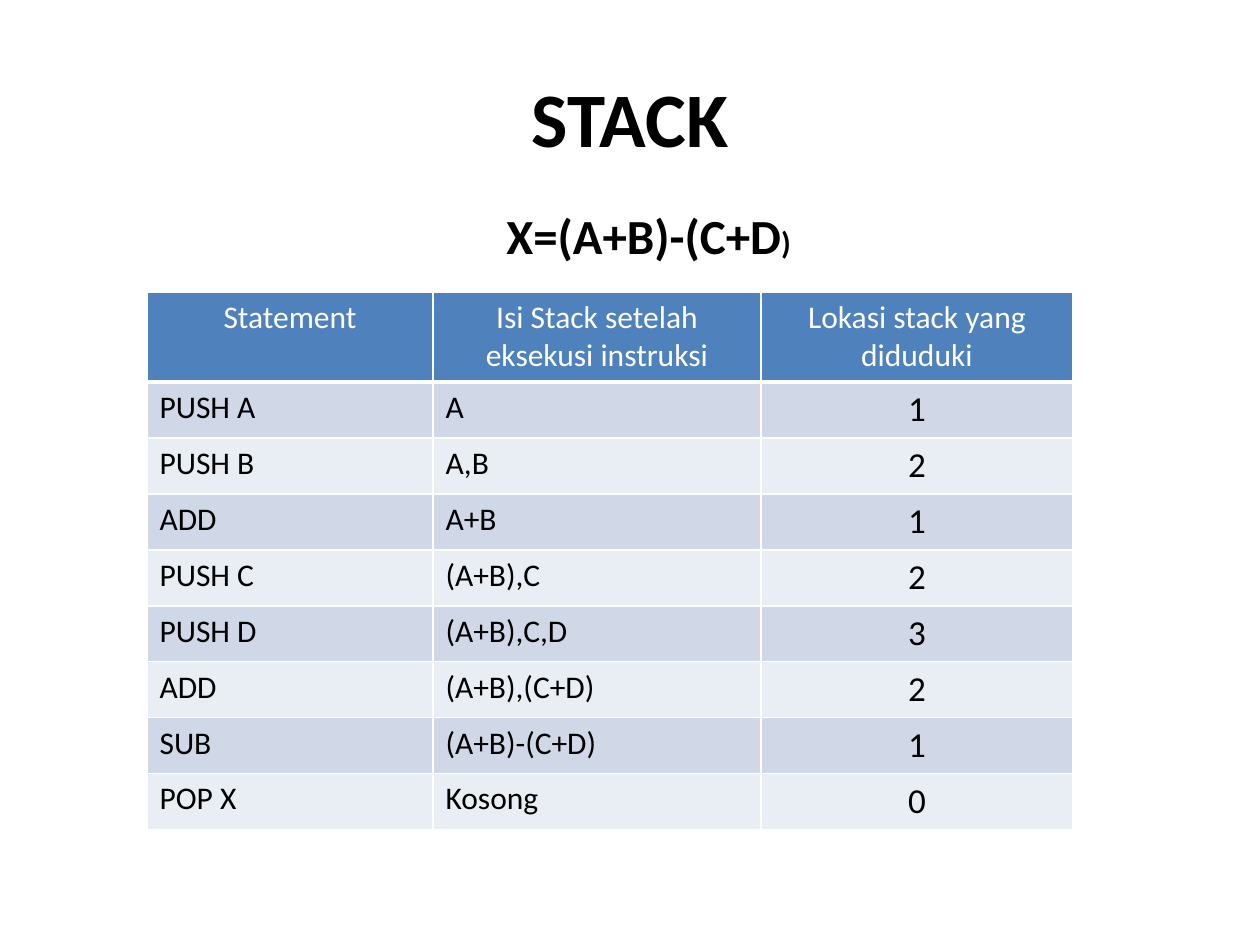
from lxml import etree
from pptx import Presentation
from pptx.dml.color import RGBColor
from pptx.enum.text import MSO_ANCHOR, PP_ALIGN
from pptx.oxml.ns import qn
from pptx.util import Emu, Pt

CENTER = PP_ALIGN.CENTER
LEFT = PP_ALIGN.LEFT
MIDDLE = MSO_ANCHOR.MIDDLE
TOP = MSO_ANCHOR.TOP

PX_PER_INCH = 126
FONT = "Calibri"
COLORS = {
    "text": "000000",
    "white": "FFFFFF",
    "header": "4F81BD",
    "odd": "D0D8E8",
    "even": "E9EDF4",
}
COLUMN_WIDTHS = [286, 328, 312]
HEADER_HEIGHT = 90
ROW_HEIGHT = 56
HEADINGS = ["Statement", "Isi Stack setelah eksekusi instruksi", "Lokasi stack yang diduduki"]
STEPS = [
    ["PUSH A", "A", "1"],
    ["PUSH B", "A,B", "2"],
    ["ADD", "A+B", "1"],
    ["PUSH C", "(A+B),C", "2"],
    ["PUSH D", "(A+B),C,D", "3"],
    ["ADD", "(A+B),(C+D)", "2"],
    ["SUB", "(A+B)-(C+D)", "1"],
    ["POP X", "Kosong", "0"],
]


def px(length):
    return Emu(round(length * 914400 / PX_PER_INCH))


def color(name):
    return RGBColor.from_string(COLORS[name])


def style_run(run, size, color_name="text", bold=False):
    run.font.name = FONT
    run.font.size = Pt(size)
    run.font.bold = bold
    run.font.color.rgb = color(color_name)


def add_text(page, box, spans, anchor, align, wrap):
    frame = page.shapes.add_textbox(*map(px, box)).text_frame
    frame.word_wrap = wrap
    frame.vertical_anchor = anchor
    para = frame.paragraphs[0]
    para.alignment = align
    for text, size in spans:
        run = para.add_run()
        run.text = text
        style_run(run, size, bold=True)


def set_borders(cell, bottom_width):
    properties = cell._tc.get_or_add_tcPr()
    for side, width in (("L", 1), ("R", 1), ("T", 1), ("B", bottom_width)):
        line = etree.SubElement(properties, qn(f"a:ln{side}"), w=str(Pt(width)))
        fill = etree.SubElement(line, qn("a:solidFill"))
        etree.SubElement(fill, qn("a:srgbClr"), val=COLORS["white"])


def fill_cell(cell, text, size, align, text_color, fill_color, bottom_width):
    set_borders(cell, bottom_width)
    cell.fill.solid()
    cell.fill.fore_color.rgb = color(fill_color)
    cell.text_frame.text = text
    para = cell.text_frame.paragraphs[0]
    para.alignment = align
    style_run(para.runs[0], size, text_color)


def add_stack_table(page, left, top):
    width = sum(COLUMN_WIDTHS)
    height = HEADER_HEIGHT + ROW_HEIGHT * len(STEPS)
    box = map(px, (left, top, width, height))
    table = page.shapes.add_table(len(STEPS) + 1, len(HEADINGS), *box).table
    for column, column_width in zip(table.columns, COLUMN_WIDTHS):
        column.width = px(column_width)
    for row in table.rows:
        row.height = px(ROW_HEIGHT)
    table.rows[0].height = px(HEADER_HEIGHT)
    for column, heading in enumerate(HEADINGS):
        fill_cell(table.cell(0, column), heading, 18, CENTER, "white", "header", 3)
    for row, step in enumerate(STEPS, start=1):
        band = "odd" if row % 2 else "even"
        for column, text in enumerate(step):
            size, align = (20, CENTER) if column == 2 else (18, LEFT)
            fill_cell(table.cell(row, column), text, size, align, "text", band, 1)


def main():
    deck = Presentation()
    deck.slide_width = px(1260)
    deck.slide_height = px(945)
    page = deck.slides.add_slide(deck.slide_layouts[6])
    add_text(page, (63, 38, 1134, 157), [("STACK", 44)], MIDDLE, CENTER, True)
    add_stack_table(page, 147, 292)
    formula = [(" X=(A+B)-(C+D", 28), (")", 18)]
    add_text(page, (483, 199, 325, 72), formula, TOP, LEFT, False)
    deck.save("out.pptx")


if __name__ == "__main__":
    main()
